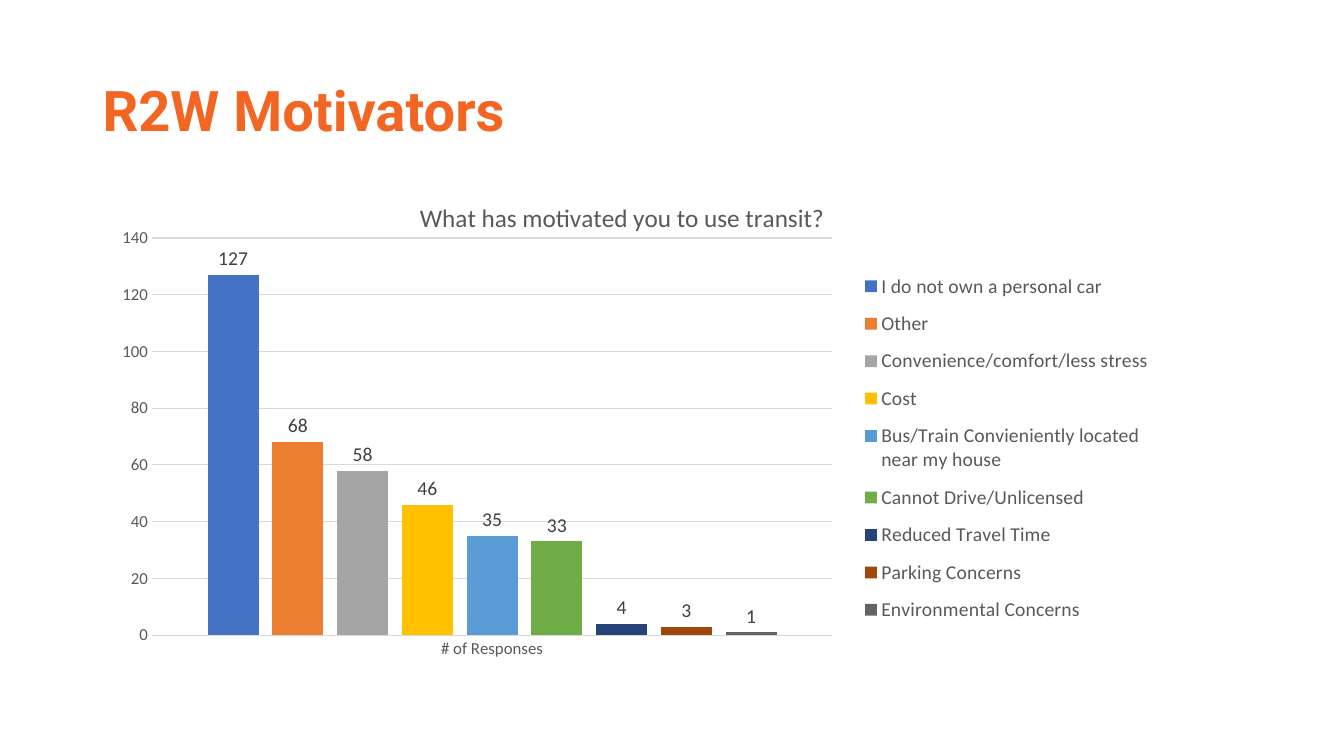
from lxml import etree
from pptx import Presentation
from pptx import util as u
from pptx.chart.data import CategoryChartData
from pptx.dml.color import RGBColor
from pptx.enum import chart as ch, text
from pptx.oxml import parse_xml
from pptx.oxml.ns import nsdecls, qn

WIDTH, HEIGHT = u.Inches(13.33), u.Inches(7.5)
COLORS = {"title": "F26522", "label": "404040", "muted": "595959", "grid": "D9D9D9"}
MOTIVATORS = [
    ("I do not own a personal car", 127, "4472C4"),
    ("Other", 68, "ED7D31"),
    ("Convenience/comfort/less stress", 58, "A5A5A5"),
    ("Cost", 46, "FFC000"),
    ("Bus/Train Convieniently located near my house", 35, "5B9BD5"),
    ("Cannot Drive/Unlicensed", 33, "70AD47"),
    ("Reduced Travel Time", 4, "264478"),
    ("Parking Concerns", 3, "9E480E"),
    ("Environmental Concerns", 1, "636363"),
]


def area(left, top, width, height):
    """Turn shares of the slide into lengths."""
    return int(left * WIDTH), int(top * HEIGHT), int(width * WIDTH), int(height * HEIGHT)


def style(font, size, color, face="Calibri", bold=False):
    font.size, font.name, font.bold = u.Pt(size), face, bold
    font.color.rgb = RGBColor.from_string(color)


def rule(line):
    line.color.rgb = RGBColor.from_string(COLORS["grid"])
    line.width = u.Pt(0.75)


def place(part, x, y, w=None, h=None, inner=False):
    """Fix a chart part at shares of the chart's size."""
    for old in part.findall(qn("c:layout")):
        part.remove(old)
    layout = parse_xml(f"<c:layout {nsdecls('c')}><c:manualLayout/></c:layout>")
    settings = [("layoutTarget", "inner")] if inner else []
    settings += [("xMode", "edge"), ("yMode", "edge")]
    settings += [(key, val) for key, val in zip("xywh", (x, y, w, h)) if val is not None]
    for key, val in settings:
        etree.SubElement(layout[0], qn(f"c:{key}")).set("val", str(val))
    before = [e for e in part if e.tag in (qn("c:tx"), qn("c:legendPos"), qn("c:legendEntry"))]
    part.insert(len(before), layout)


def add_heading(slide, words, box):
    frame = slide.shapes.add_textbox(*box).text_frame
    frame.word_wrap = True
    frame.vertical_anchor = text.MSO_ANCHOR.MIDDLE
    frame.text = words
    frame.paragraphs[0].line_spacing = 0.9
    style(frame.paragraphs[0].runs[0].font, 40, COLORS["title"], "Roboto", True)


def format_axes(chart):
    for axis in (chart.category_axis, chart.value_axis):
        axis.major_tick_mark = axis.minor_tick_mark = ch.XL_TICK_MARK.NONE
        style(axis.tick_labels.font, 12, COLORS["muted"])
    rule(chart.category_axis.format.line)
    values = chart.value_axis
    values.minimum_scale, values.maximum_scale, values.major_unit = 0, 140, 20
    values.format.line.fill.background()
    rule(values.major_gridlines.format.line)


def format_bars(plot):
    plot.gap_width, plot.overlap = 219, -27
    plot.vary_by_categories = False
    for bar, (_, _, color) in zip(plot.series, MOTIVATORS):
        bar.format.fill.solid()
        bar.format.fill.fore_color.rgb = RGBColor.from_string(color)
        bar.invert_if_negative = False
        labels = bar.data_labels
        labels.show_value = True
        labels.position = ch.XL_LABEL_POSITION.OUTSIDE_END
        style(labels.font, 14, COLORS["label"])


def add_motivator_chart(slide, question, box):
    data = CategoryChartData()
    data.categories = ["# of Responses"]
    for name, count, _ in MOTIVATORS:
        data.add_series(name, [count])
    chart = slide.shapes.add_chart(ch.XL_CHART_TYPE.COLUMN_CLUSTERED, *box, data).chart
    style(chart.font, 10, "000000")
    format_axes(chart)
    format_bars(chart.plots[0])

    # Question above the bars
    title = chart.chart_title
    title.text_frame.text = question
    style(title.text_frame.paragraphs[0].runs[0].font, 18, COLORS["muted"])
    title.include_in_layout = False

    # Legend on the right
    chart.has_legend = True
    chart.legend.position = ch.XL_LEGEND_POSITION.RIGHT
    chart.legend.include_in_layout = False
    style(chart.legend.font, 14, COLORS["muted"])

    # Layout inside the chart
    place(title._element, 0.3, 0.04)
    place(chart.legend._element, 0.71, 0.17, 0.28, 0.75)
    place(chart._chartSpace.chart.plotArea, 0.055, 0.124, 0.633, 0.796, inner=True)


def main():
    deck = Presentation()
    deck.slide_width, deck.slide_height = WIDTH, HEIGHT
    slide = deck.slides.add_slide(deck.slide_layouts[6])
    add_heading(slide, "R2W Motivators", area(0.069, 0.053, 0.863, 0.193))
    add_motivator_chart(slide, "What has motivated you to use transit?",
                        area(0.069, 0.233, 0.8, 0.66))
    deck.save("out.pptx")


if __name__ == "__main__":
    main()
